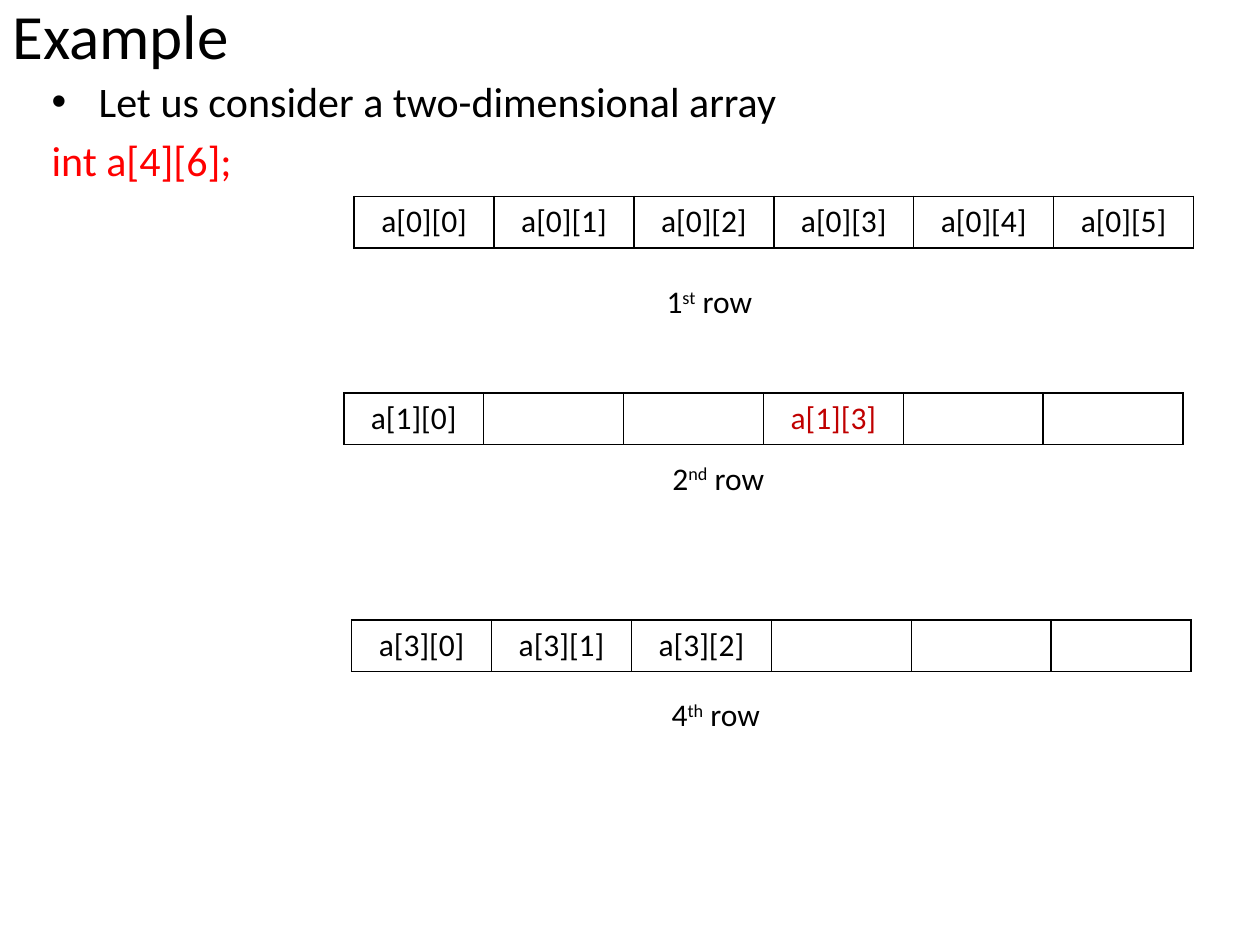
import pptx
import pptx.util
import pptx.dml.color
import pptx.enum.text
import pptx.oxml
import pptx.oxml.ns
from pptx.util import Cm

COLORS = {"text": "000000", "code": "FF0000", "mark": "C00000", "paper": "FFFFFF"}
COLUMNS = 6
CELL_W, CELL_H = Cm(2.82), Cm(1.04)
CENTER = pptx.enum.text.PP_ALIGN.CENTER
MIDDLE = pptx.enum.text.MSO_ANCHOR.MIDDLE


class Deck:
    """Holds the slide and its text style."""

    def __init__(self, prs, font="Calibri"):
        self.s = prs.slides.add_slide(prs.slide_layouts[6])
        self.font = font

    def style(self, p, size, color="text"):
        for r in p.runs:
            r.font.name = self.font
            r.font.size = pptx.util.Pt(size)
            r.font.color.rgb = pptx.dml.color.RGBColor.from_string(COLORS[color])

    def box(self, left, top, width, height):
        tf = self.s.shapes.add_textbox(left, top, width, height).text_frame
        tf.word_wrap = True
        return tf

    def title(self, text):
        tf = self.box(0, 0, Cm(22.86), Cm(1.4))
        tf.vertical_anchor = MIDDLE
        tf.text = text
        self.style(tf.paragraphs[0], 36)

    def body(self, lines):
        tf = self.box(Cm(0.79), Cm(1.4), Cm(23.34), Cm(17.07))
        tf.text = "\n".join(text for text, _, _ in lines)
        for p, (_, color, bullet) in zip(tf.paragraphs, lines):
            p.space_before = pptx.util.Pt(4.8)
            self.style(p, 24, color)
            pPr = p._p.get_or_add_pPr()
            pPr.set("marL", str(Cm(0.95)))
            pPr.set("indent", str(-Cm(0.95)))
            if bullet:
                ns = pptx.oxml.ns.nsdecls("a")
                pPr.append(pptx.oxml.parse_xml(f'<a:buFont {ns} typeface="Arial"/>'))
                pPr.append(pptx.oxml.parse_xml(f'<a:buChar {ns} char="•"/>'))

    def borders(self, cell):
        tcPr = cell._tc.get_or_add_tcPr()
        for i, side in enumerate(("lnL", "lnR", "lnT", "lnB")):
            tcPr.insert(i, pptx.oxml.parse_xml(
                f'<a:{side} {pptx.oxml.ns.nsdecls("a")} w="12700"><a:solidFill>'
                f'<a:srgbClr val="{COLORS["text"]}"/></a:solidFill></a:{side}>'))

    def array_row(self, left, top, index, shown, marked):
        table = self.s.shapes.add_table(
            1, COLUMNS, left, top, CELL_W * COLUMNS, CELL_H).table
        table.first_row = table.horz_banding = False
        for col, cell in enumerate(table.rows[0].cells):
            table.columns[col].width = CELL_W
            cell.fill.solid()
            cell.fill.fore_color.rgb = pptx.dml.color.RGBColor.from_string(COLORS["paper"])
            self.borders(cell)
            if col in shown:
                cell.text = f"a[{index}][{col}]"
            p = cell.text_frame.paragraphs[0]
            p.alignment = CENTER
            self.style(p, 18, "mark" if col in marked else "text")

    def row_label(self, left, top, number, suffix):
        p = self.box(left, top, Cm(10.72), Cm(1.02)).paragraphs[0]
        p.alignment = CENTER
        for text in (number, suffix, " row"):
            p.add_run().text = text
        self.style(p, 18)
        p.runs[1].font._element.set("baseline", "30000")


def main():
    prs = pptx.Presentation()
    prs.slide_width, prs.slide_height = Cm(25.4), Cm(19.05)
    deck = Deck(prs)

    # Heading and declaration
    deck.title("Example")
    deck.body([("Let us consider a two-dimensional array", "text", True),
               ("int a[4][6];", "code", False)])

    # Array rows: index, shown columns, marked columns, table and label places
    rows = [
        (0, range(COLUMNS), (), (7.14, 3.96), (8.94, 5.56), "st"),
        (1, (0, 3), (3,), (6.93, 7.92), (9.12, 9.12), "nd"),
        (3, range(3), (), (7.09, 12.5), (9.07, 13.89), "th"),
    ]
    for index, shown, marked, table_at, label_at, suffix in rows:
        deck.array_row(*map(Cm, table_at), index, shown, marked)
        deck.row_label(*map(Cm, label_at), str(index + 1), suffix)

    prs.save("out.pptx")


if __name__ == "__main__":
    main()
